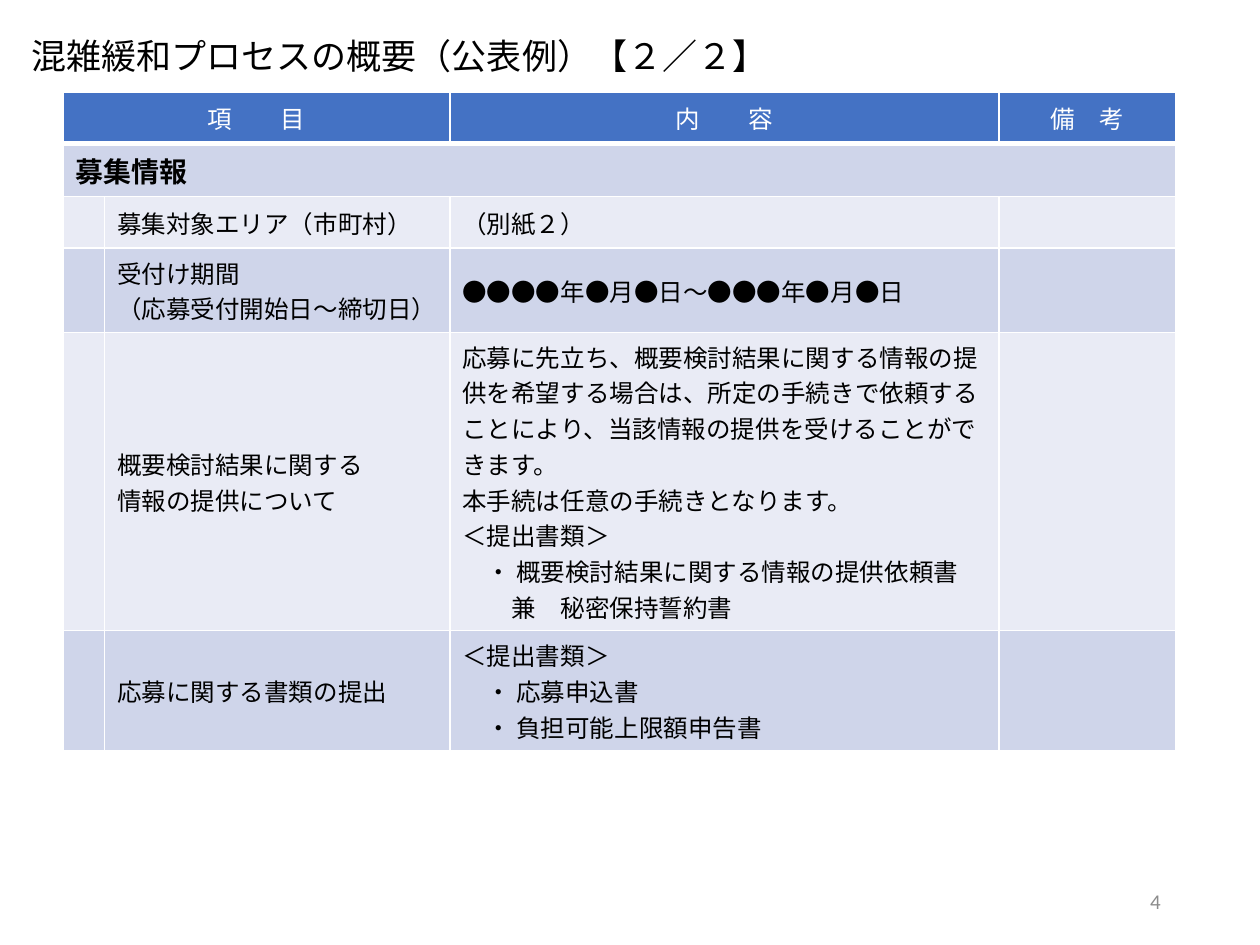
"""Build the congestion relief process summary slide."""
from dataclasses import dataclass
from typing import Optional

from lxml.etree import SubElement
from pptx import Presentation
from pptx.dml.color import RGBColor
from pptx.enum.lang import MSO_LANGUAGE_ID as Language
from pptx.enum.text import MSO_ANCHOR as Anchor, PP_ALIGN as Align
from pptx.oxml.ns import qn
from pptx.util import Inches, Pt

COLORS = {"header": "4472C4", "band": "CFD5EA", "light": "E9EBF5",
          "white": "FFFFFF", "black": "000000", "gray": "8C8C8C"}
LATIN, JAPANESE = "Calibri", "Noto Sans CJK JP"
WIDTH, HEIGHT = Inches(10), Inches(7.5)
COLUMN_WIDTHS = (0.33, 2.74, 4.36, 1.4)
ROW_HEIGHT = 0.41
BULLET = "・ "


@dataclass(frozen=True)
class Style:
    size: float = 14
    color: str = "black"
    font: str = JAPANESE
    bold: bool = False
    align: Optional[Align] = None
    spacing: Optional[float] = None


@dataclass(frozen=True)
class Row:
    texts: tuple[str, ...]
    fill: str
    style: Style = Style()
    span: int = 1
    bottom_border: float = 1


@dataclass(frozen=True)
class Label:
    text: str
    left: float
    top: float
    width: float
    height: float
    anchor: Anchor
    style: Style


ROWS = (
    Row(("項　　目", "", "内　　容", "備　考"), "header",
        Style(color="white", font=LATIN, align=Align.CENTER), 2, 3),
    Row(("募集情報", "", "", ""), "band", Style(size=16, bold=True), 4),
    Row(("", "募集対象エリア（市町村）", "（別紙２）", ""), "light"),
    Row(("", "受付け期間\n（応募受付開始日～締切日）",
         "●●●●年●月●日～●●●年●月●日", ""), "band"),
    Row(("", "概要検討結果に関する\n情報の提供について",
         "応募に先立ち、概要検討結果に関する情報の提供を希望する場合は、"
         "所定の手続きで依頼することにより、当該情報の提供を受けることができます。\n"
         "本手続は任意の手続きとなります。\n＜提出書類＞\n"
         "・ 概要検討結果に関する情報の提供依頼書　兼　秘密保持誓約書", ""), "light"),
    Row(("", "応募に関する書類の提出",
         "＜提出書類＞\n・ 応募申込書\n・ 負担可能上限額申告書", ""), "band"),
)
LABELS = (
    Label("混雑緩和プロセスの概要（公表例）【２／２】", 0.015, 0.025, 0.9, 0.063,
          Anchor.BOTTOM, Style(size=20, spacing=0.9)),
    Label("4", 0.706, 0.927, 0.225, 0.053, Anchor.MIDDLE,
          Style(size=12, color="gray", font=LATIN, align=Align.RIGHT)),
)


def apply_format(target, values: dict) -> None:
    for name, value in values.items():
        setattr(target, name, value)


def write_text(frame, text: str, style: Style) -> None:
    for index, line in enumerate(text.split("\n")):
        paragraph = frame.add_paragraph() if index else frame.paragraphs[0]
        apply_format(paragraph, {"alignment": style.align, "line_spacing": style.spacing})
        if line.startswith(BULLET):
            properties = paragraph._p.get_or_add_pPr()
            properties.set("marL", str(Inches(0.39)))
            properties.set("indent", str(Inches(-0.2)))
        run = paragraph.add_run()
        run.text = line
        apply_format(run.font, {"size": Pt(style.size), "bold": style.bold,
                                "name": style.font, "language_id": Language.JAPANESE})
        run.font.color.rgb = RGBColor.from_string(COLORS[style.color])
        east_asian = SubElement(run._r.get_or_add_rPr(), qn("a:ea"))
        east_asian.set("typeface", JAPANESE)


def set_borders(cell, bottom: float) -> None:
    properties = cell._tc.get_or_add_tcPr()
    for index, (side, width) in enumerate({"L": 1, "R": 1, "T": 1, "B": bottom}.items()):
        line = properties.makeelement(qn(f"a:ln{side}"), {"w": str(Pt(width))})
        fill = SubElement(line, qn("a:solidFill"))
        SubElement(fill, qn("a:srgbClr")).set("val", COLORS["white"])
        properties.insert(index, line)


def draw_table(slide) -> None:
    shape = slide.shapes.add_table(len(ROWS), len(COLUMN_WIDTHS), Inches(0.5), Inches(0.73),
                                   Inches(sum(COLUMN_WIDTHS)), Inches(ROW_HEIGHT * len(ROWS)))
    table = shape.table
    for column, width in zip(table.columns, COLUMN_WIDTHS):
        column.width = Inches(width)
    for row_index, row in enumerate(ROWS):
        table.rows[row_index].height = Inches(ROW_HEIGHT)
        if row.span > 1:
            table.cell(row_index, 0).merge(table.cell(row_index, row.span - 1))
        for column_index, text in enumerate(row.texts):
            cell = table.cell(row_index, column_index)
            cell.vertical_anchor = Anchor.MIDDLE
            cell.fill.solid()
            cell.fill.fore_color.rgb = RGBColor.from_string(COLORS[row.fill])
            set_borders(cell, row.bottom_border)
            if text:
                write_text(cell.text_frame, text, row.style)
    shape.height = Inches(4.32)


def draw_label(slide, label: Label) -> None:
    shape = slide.shapes.add_textbox(int(WIDTH * label.left), int(HEIGHT * label.top),
                                     int(WIDTH * label.width), int(HEIGHT * label.height))
    apply_format(shape.text_frame, {"word_wrap": True, "vertical_anchor": label.anchor})
    write_text(shape.text_frame, label.text, label.style)


def main() -> None:
    presentation = Presentation()
    apply_format(presentation, {"slide_width": WIDTH, "slide_height": HEIGHT})
    slide = presentation.slides.add_slide(presentation.slide_layouts[6])
    draw_table(slide)
    for label in LABELS:
        draw_label(slide, label)
    presentation.save("out.pptx")


if __name__ == "__main__":
    main()
